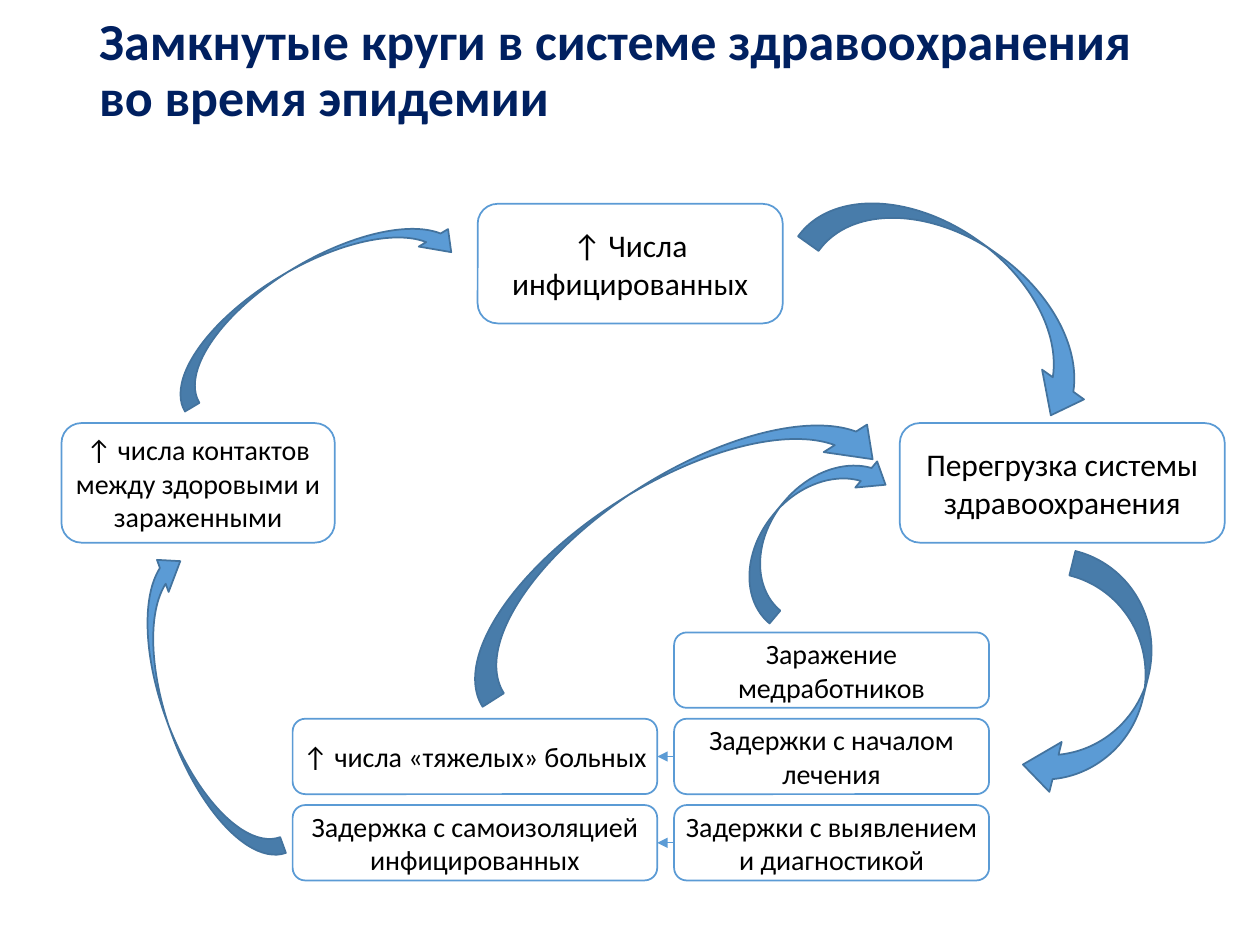
from dataclasses import dataclass

import lxml.etree
import pptx
import pptx.dml.color
import pptx.enum.shapes
import pptx.enum.text
import pptx.oxml.ns
import pptx.util

Cm = pptx.util.Cm
Pt = pptx.util.Pt
MIDDLE = pptx.enum.text.MSO_ANCHOR.MIDDLE
CENTER = pptx.enum.text.PP_ALIGN.CENTER

NAVY, BLACK, WHITE = "002060", "000000", "FFFFFF"
BLUE, DARK_BLUE = "5B9BD5", "43739E"
LEFT_SIDE, RIGHT_SIDE = 1, 3

FRAME = {"word_wrap": True, "vertical_anchor": MIDDLE}
TIGHT_FRAME = FRAME | {
    "margin_left": Cm(0.1),
    "margin_right": Cm(0.1),
    "margin_top": Cm(0.13),
    "margin_bottom": Cm(0.13),
}
TITLE_FONT = {"name": "Calibri", "size": Pt(29.7), "bold": True}
LARGE_FONT = {"name": "Calibri", "size": Pt(18)}
SMALL_FONT = {"name": "Calibri", "size": Pt(16)}


@dataclass
class Factor:
    text: str
    left: float
    top: float
    width: float
    height: float
    frame: dict
    font: dict


@dataclass
class Cycle:
    left: float
    top: float
    width: float
    height: float
    rotation: float


def rgb(color: str) -> pptx.dml.color.RGBColor:
    return pptx.dml.color.RGBColor.from_string(color)


def apply(target, values: dict) -> None:
    for name, value in values.items():
        setattr(target, name, value)


def write(shape, text: str, color: str, frame: dict, font: dict, paragraph: dict) -> None:
    apply(shape.text_frame, frame)
    line = shape.text_frame.paragraphs[0]
    apply(line, paragraph)
    run = line.add_run()
    run.text = text
    apply(run.font, font)
    run.font.color.rgb = rgb(color)


def paint(shape, fill: str, outline: str) -> None:
    shape.shadow.inherit = False
    shape.fill.solid()
    shape.fill.fore_color.rgb = rgb(fill)
    shape.line.color.rgb = rgb(outline)
    shape.line.width = Pt(1)


def draw_factor(slide, factor: Factor):
    box = slide.shapes.add_shape(
        pptx.enum.shapes.MSO_SHAPE.ROUNDED_RECTANGLE,
        Cm(factor.left), Cm(factor.top), Cm(factor.width), Cm(factor.height),
    )
    paint(box, WHITE, BLUE)
    write(box, factor.text, BLACK, factor.frame, factor.font, {"alignment": CENTER})
    return box


def draw_cycle(slide, cycle: Cycle) -> None:
    arrow = slide.shapes.add_shape(
        pptx.enum.shapes.MSO_SHAPE.CURVED_LEFT_ARROW,
        Cm(cycle.left), Cm(cycle.top), Cm(cycle.width), Cm(cycle.height),
    )
    arrow.rotation = cycle.rotation
    for index, value in enumerate((0.25, 0.51, 0.32)):
        arrow.adjustments[index] = value
    paint(arrow, BLUE, DARK_BLUE)


def draw_link(slide, cause, effect) -> None:
    link = slide.shapes.add_connector(pptx.enum.shapes.MSO_CONNECTOR.STRAIGHT, 0, 0, 0, 0)
    link.begin_connect(cause, LEFT_SIDE)
    link.end_connect(effect, RIGHT_SIDE)
    link.line.color.rgb = rgb(BLUE)
    link.line.width = Pt(0.5)
    qn = pptx.oxml.ns.qn
    lxml.etree.SubElement(link.line._get_or_add_ln(), qn("a:tailEnd"), type="triangle")
    lxml.etree.SubElement(link._element.spPr, qn("a:effectLst"))


ROW_TOPS = [12.75 + 1.74 * row for row in range(3)]


def delay(text: str, row: int) -> Factor:
    return Factor(text, 13.59, ROW_TOPS[row], 6.35, 1.52, TIGHT_FRAME, SMALL_FONT)


def outcome(text: str, row: int) -> Factor:
    return Factor(text, 5.9, ROW_TOPS[row], 7.35, 1.52, TIGHT_FRAME, SMALL_FONT)


STAGES = [
    Factor("↑ Числа инфицированных", 9.63, 4.11, 6.15, 2.41, FRAME, LARGE_FONT),
    Factor("Перегрузка системы здравоохранения", 18.14, 8.53, 6.55, 2.41, FRAME, LARGE_FONT),
    Factor("↑ числа контактов между здоровыми и зараженными",
           1.24, 8.53, 5.51, 2.41, TIGHT_FRAME, SMALL_FONT),
    delay("Заражение медработников", 0),
]
CONSEQUENCES = [
    (delay("Задержки с началом лечения", 1),
     outcome("↑ числа «тяжелых» больных", 1)),
    (delay("Задержки с выявлением и диагностикой", 2),
     outcome("Задержка с самоизоляцией инфицированных", 2)),
]
CYCLES = [
    Cycle(18.42, 2.51, 2.03, 6.76, 305.3),
    Cycle(21.06, 11.28, 2.03, 4.95, 13.8),
    Cycle(15.6, 8.61, 1.35, 3.99, 219.9),
    Cycle(12.32, 5.84, 2.03, 9.83, 237.6),
    Cycle(3.33, 11.02, 1.35, 6.6, 160.1),
    Cycle(5.54, 2.72, 1.35, 6.6, 239.1),
]


def main() -> None:
    deck = pptx.Presentation()
    apply(deck, {"slide_width": Cm(25.4), "slide_height": Cm(19.05)})
    slide = deck.slides.add_slide(deck.slide_layouts[6])
    heading = slide.shapes.add_textbox(Cm(1.75), Cm(0.46), Cm(21.89), Cm(1.96))
    write(heading, "Замкнутые круги в системе здравоохранения во время эпидемии",
          NAVY, FRAME, TITLE_FONT, {"line_spacing": 0.9})
    for stage in STAGES:
        draw_factor(slide, stage)
    for cause, effect in CONSEQUENCES:
        draw_link(slide, draw_factor(slide, cause), draw_factor(slide, effect))
    for cycle in CYCLES:
        draw_cycle(slide, cycle)
    deck.save("out.pptx")


if __name__ == "__main__":
    main()
